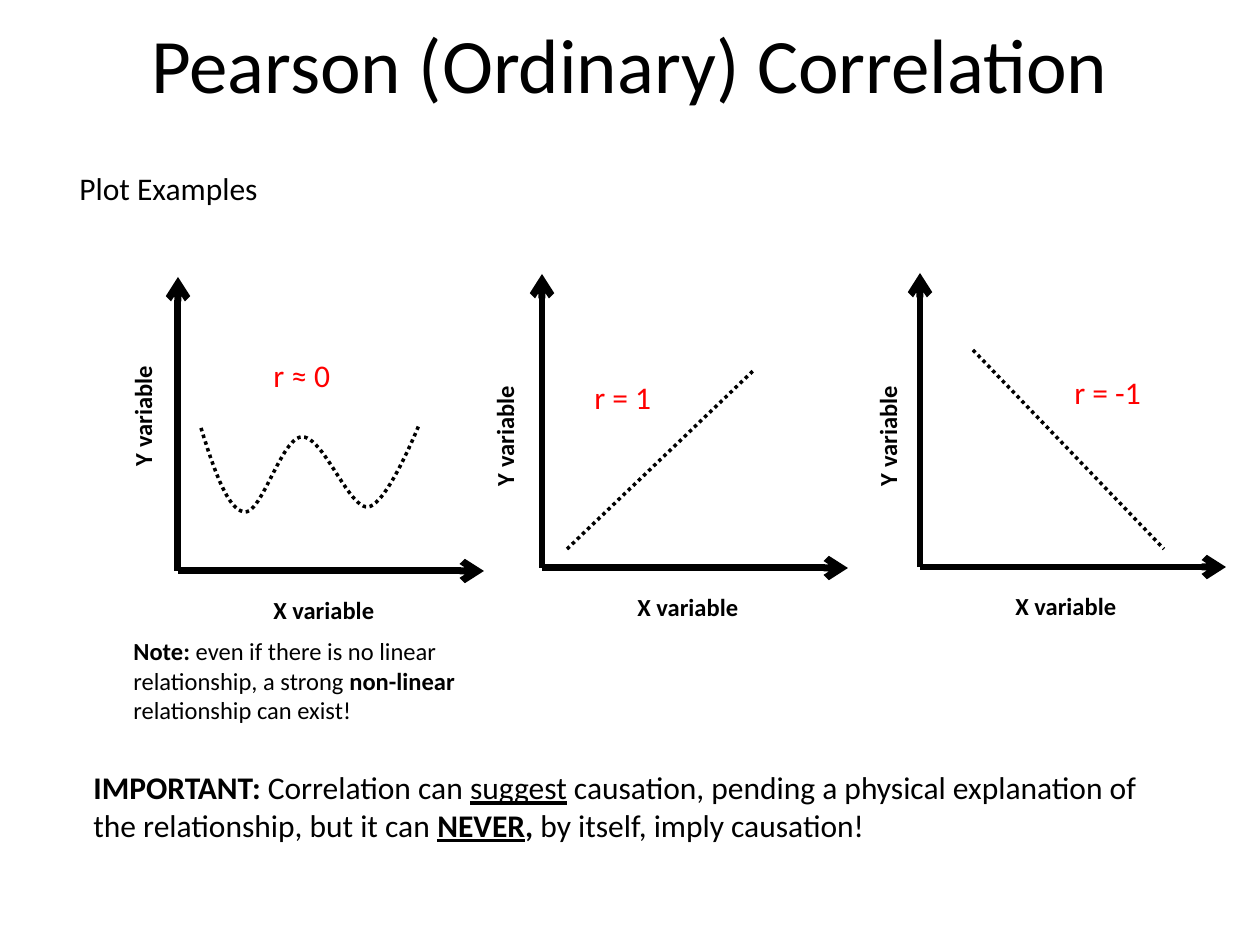
from dataclasses import dataclass

from lxml import etree
from pptx import Presentation
from pptx import util as u
from pptx.dml.color import RGBColor
from pptx.enum import dml, shapes, text
from pptx.oxml.ns import qn

PX = u.Inches(1) / 126


@dataclass(frozen=True)
class Theme:
    font: str = "Calibri"
    ink: str = "000000"
    accent: str = "FF0000"
    title: int = 44
    body: int = 18
    label: int = 14
    axis: int = 4
    trend: int = 2


def emu(px):
    return u.Emu(round(px * PX))


def bezier(start, first, second, end, steps=24):
    """Points along a cubic curve, without its start."""
    for step in range(1, steps + 1):
        t = step / steps
        s = 1 - t
        yield tuple(s**3 * a + 3 * s * s * t * b + 3 * s * t * t * c + t**3 * d
                    for a, b, c, d in zip(start, first, second, end))


class PlotSlide:
    def __init__(self, deck, theme):
        self.theme = theme
        self.page = deck.slides.add_slide(deck.slide_layouts[5])

    def add_span(self, para, content, size, color=None, bold=False, underline=False):
        span = para.add_run()
        span.text = content
        font = span.font
        font.name, font.size = self.theme.font, u.Pt(size)
        font.bold, font.underline = bold, underline
        font.color.rgb = RGBColor.from_string(color or self.theme.ink)

    def title(self, content, left, top, width, height):
        box = self.page.shapes.title
        box.left, box.top, box.width, box.height = map(emu, (left, top, width, height))
        box.text_frame.vertical_anchor = text.MSO_ANCHOR.MIDDLE
        para = box.text_frame.paragraphs[0]
        para.alignment = text.PP_ALIGN.CENTER
        self.add_span(para, content, self.theme.title)

    def text(self, spans, left, top, width, height, size, wrap=True, turn=0, color=None):
        """Add a text box; each span is (content, bold, underline)."""
        box = self.page.shapes.add_textbox(*map(emu, (left, top, width, height)))
        box.rotation = turn
        box.text_frame.word_wrap = wrap
        box.text_frame.auto_size = text.MSO_AUTO_SIZE.SHAPE_TO_FIT_TEXT
        for content, bold, underline in spans:
            self.add_span(box.text_frame.paragraphs[0], content, size, color, bold, underline)

    def axis_label(self, content, left, top, turn=0):
        self.text([(content, True, False)], left, top, 128, 43, self.theme.label,
                  wrap=False, turn=turn)

    def stroke(self, shape, width, dotted=False):
        shape.line.color.rgb = RGBColor.from_string(self.theme.ink)
        shape.line.width = u.Pt(width)
        if dotted:
            shape.line.dash_style = dml.MSO_LINE.ROUND_DOT

    def line(self, start, end, width, dotted=False, arrow=False):
        link = self.page.shapes.add_connector(
            shapes.MSO_CONNECTOR.STRAIGHT, *map(emu, (*start, *end)))
        self.stroke(link, width, dotted)
        properties = link._element.spPr
        if arrow:
            etree.SubElement(properties.find(qn("a:ln")), qn("a:tailEnd"), type="arrow")
        etree.SubElement(properties, qn("a:effectLst"))

    def axes(self, x, y):
        """Draw both axes from the origin, with the X label below."""
        self.line((x, y), (x, y - 294), self.theme.axis, arrow=True)
        self.line((x, y), (x + 306, y), self.theme.axis, arrow=True)
        self.axis_label("X variable", x + 83, y + 18)

    def trend(self, start, end):
        self.line(start, end, self.theme.trend, dotted=True)

    def curve(self, start, segments):
        points = [start]
        for segment in segments:
            points += bezier(points[-1], *segment)
        points = [(emu(x), emu(y)) for x, y in points]
        builder = self.page.shapes.build_freeform(*points[0], scale=1.0)
        builder.add_line_segments(points[1:], close=False)
        wave = builder.convert_to_shape()
        wave.shadow.inherit = False
        wave.fill.background()
        self.stroke(wave, self.theme.trend, dotted=True)


def main():
    deck = Presentation()
    deck.slide_width, deck.slide_height = u.Inches(10), u.Inches(7.5)
    theme = Theme()
    slide = PlotSlide(deck, theme)

    slide.title("Pearson (Ordinary) Correlation", 63, -16, 1134, 157)
    slide.text([("Plot Examples", False, False)], 67, 163, 1116, 50, theme.body)

    # origin, Y label corner, coefficient, coefficient corner
    plots = [
        ((178, 571), (79, 393), "r ≈ 0", (261, 350)),
        ((542, 568), (441, 413), "r = 1", (582, 372)),
        ((920, 567), (824, 413), "r = -1", (1062, 367)),
    ]
    for origin, label, value, place in plots:
        slide.axes(*origin)
        slide.axis_label("Y variable", *label, turn=270)
        slide.text([(value, False, False)], *place, 174, 50, theme.body, color=theme.accent)

    slide.curve((201, 428), [
        ((214, 470), (228, 511), (245, 512)),
        ((262, 513), (282, 437), (302, 437)),
        ((323, 436), (349, 509), (368, 507)),
        ((387, 505), (419, 425), (419, 425)),
    ])
    slide.trend((567, 549), (753, 371))
    slide.trend((973, 350), (1164, 549))

    slide.text([
        ("Note: ", True, False),
        ("even if there is no linear relationship, a strong ", False, False),
        ("non-linear ", True, False),
        ("relationship can exist!", False, False),
    ], 121, 630, 432, 102, theme.label)
    slide.text([
        ("IMPORTANT:", True, False),
        (" Correlation can ", False, False),
        ("suggest", False, True),
        (" causation, pending a physical explanation of the relationship, but it can ",
         False, False),
        ("NEVER", True, True),
        (",", True, False),
        (" by itself, imply causation!", False, False),
    ], 81, 762, 1116, 89, theme.body)

    deck.save("out.pptx")


if __name__ == "__main__":
    main()
